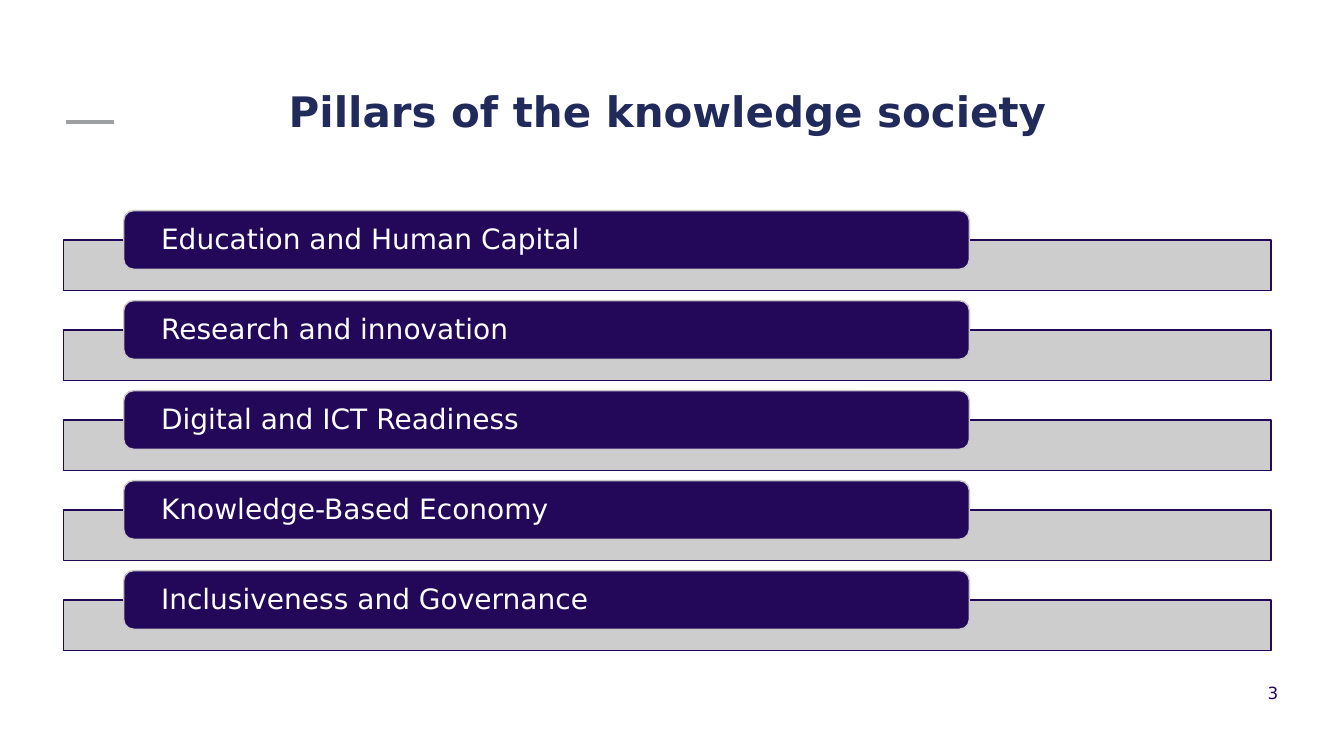
"""Build the slide listing the pillars of the knowledge society."""
import dataclasses

import lxml.etree
import pptx
import pptx.dml.color
import pptx.enum.shapes
import pptx.enum.text
import pptx.oxml.ns
import pptx.util

TITLE = "Pillars of the knowledge society"
PILLARS = [
    "Education and Human Capital",
    "Research and innovation",
    "Digital and ICT Readiness",
    "Knowledge-Based Economy",
    "Inclusiveness and Governance",
]
SLIDE_NUMBER = "3"

SLIDE_SIZE = (960, 540)
TITLE_BOX = (46, 64, 862, 67)
NUMBER_BOX = (873.4, 487.4, 39.6, 14.4)
ACCENT_LINE = (47.5, 87.1, 81.4, 87.1)
FIRST_BAR = (45.2, 171.4, 862.6, 36)
FIRST_LABEL = (88.4, 150.5, 604, 41.8)
ROW_PITCH = 64.28
LABEL_INSET = 24.6


@dataclasses.dataclass(frozen=True)
class Theme:
    """Colours and type of the slide."""
    font: str = "DejaVu Sans"
    title: str = "202A5B"
    indigo: str = "230859"
    grey: str = "C8C8C8"
    accent: str = "9D9FA1"
    white: str = "FFFFFF"
    title_size: float = 30
    label_size: float = 20
    number_size: float = 12


THEME = Theme()


def points(values):
    """Convert numbers to lengths in points."""
    return [pptx.util.Pt(value) for value in values]


def rgb(colour):
    """Return a colour object for a hex string."""
    return pptx.dml.color.RGBColor.from_string(colour)


def write(shape, text, size, colour, alignment, anchor, inset=0, bold=False):
    """Write one formatted run in a shape and return its paragraph."""
    frame = shape.text_frame
    frame.word_wrap = True
    frame.auto_size = pptx.enum.text.MSO_AUTO_SIZE.NONE
    frame.vertical_anchor = anchor
    frame.margin_left = frame.margin_right = pptx.util.Pt(inset)
    frame.margin_top = frame.margin_bottom = 0
    paragraph = frame.paragraphs[0]
    paragraph.alignment = alignment
    run = paragraph.add_run()
    run.text = text
    run.font.name = THEME.font
    run.font.size = pptx.util.Pt(size)
    run.font.bold = bold
    run.font.color.rgb = rgb(colour)
    return paragraph


def add_box(slide, kind, box, offset, fill, line):
    """Add a filled and outlined shape moved down by an offset."""
    left, top, width, height = box
    shape = slide.shapes.add_shape(kind, *points((left, top + offset, width, height)))
    shape.shadow.inherit = False
    shape.fill.solid()
    shape.fill.fore_color.rgb = rgb(fill)
    shape.line.color.rgb = rgb(line)
    shape.line.width = pptx.util.Pt(1)
    return shape


def add_pillar(slide, text, offset):
    """Add one grey bar with its rounded label."""
    qn = pptx.oxml.ns.qn
    kinds = pptx.enum.shapes.MSO_SHAPE
    bar = add_box(slide, kinds.RECTANGLE, FIRST_BAR, offset, THEME.grey, THEME.indigo)
    fill_colour = bar.element.spPr.find(qn("a:solidFill")).find(qn("a:srgbClr"))
    lxml.etree.SubElement(fill_colour, qn("a:alpha"), val="90000")
    label = add_box(slide, kinds.ROUNDED_RECTANGLE, FIRST_LABEL, offset, THEME.indigo, THEME.grey)
    paragraph = write(label, text, THEME.label_size, THEME.white,
                      pptx.enum.text.PP_ALIGN.LEFT, pptx.enum.text.MSO_ANCHOR.MIDDLE, LABEL_INSET)
    paragraph.line_spacing = 0.9


def add_heading(slide):
    """Add the accent line and the title."""
    line = slide.shapes.add_connector(pptx.enum.shapes.MSO_CONNECTOR.STRAIGHT, *points(ACCENT_LINE))
    line.line.color.rgb = rgb(THEME.accent)
    line.line.width = pptx.util.Pt(2.4)
    lxml.etree.SubElement(line.element.spPr, pptx.oxml.ns.qn("a:effectLst"))
    title = slide.shapes.title
    title.left, title.top, title.width, title.height = points(TITLE_BOX)
    paragraph = write(title, TITLE, THEME.title_size, THEME.title,
                      pptx.enum.text.PP_ALIGN.CENTER, pptx.enum.text.MSO_ANCHOR.TOP, bold=True)
    paragraph.line_spacing = pptx.util.Pt(33)
    paragraph.space_before = pptx.util.Pt(0)


def main():
    """Build and save the presentation."""
    presentation = pptx.Presentation()
    presentation.slide_width, presentation.slide_height = points(SLIDE_SIZE)
    slide = presentation.slides.add_slide(presentation.slide_layouts[5])
    add_heading(slide)
    for row, text in enumerate(PILLARS):
        add_pillar(slide, text, row * ROW_PITCH)
    number = slide.shapes.add_textbox(*points(NUMBER_BOX))
    write(number, SLIDE_NUMBER, THEME.number_size, THEME.indigo,
          pptx.enum.text.PP_ALIGN.RIGHT, pptx.enum.text.MSO_ANCHOR.BOTTOM)
    presentation.save("out.pptx")


if __name__ == "__main__":
    main()
